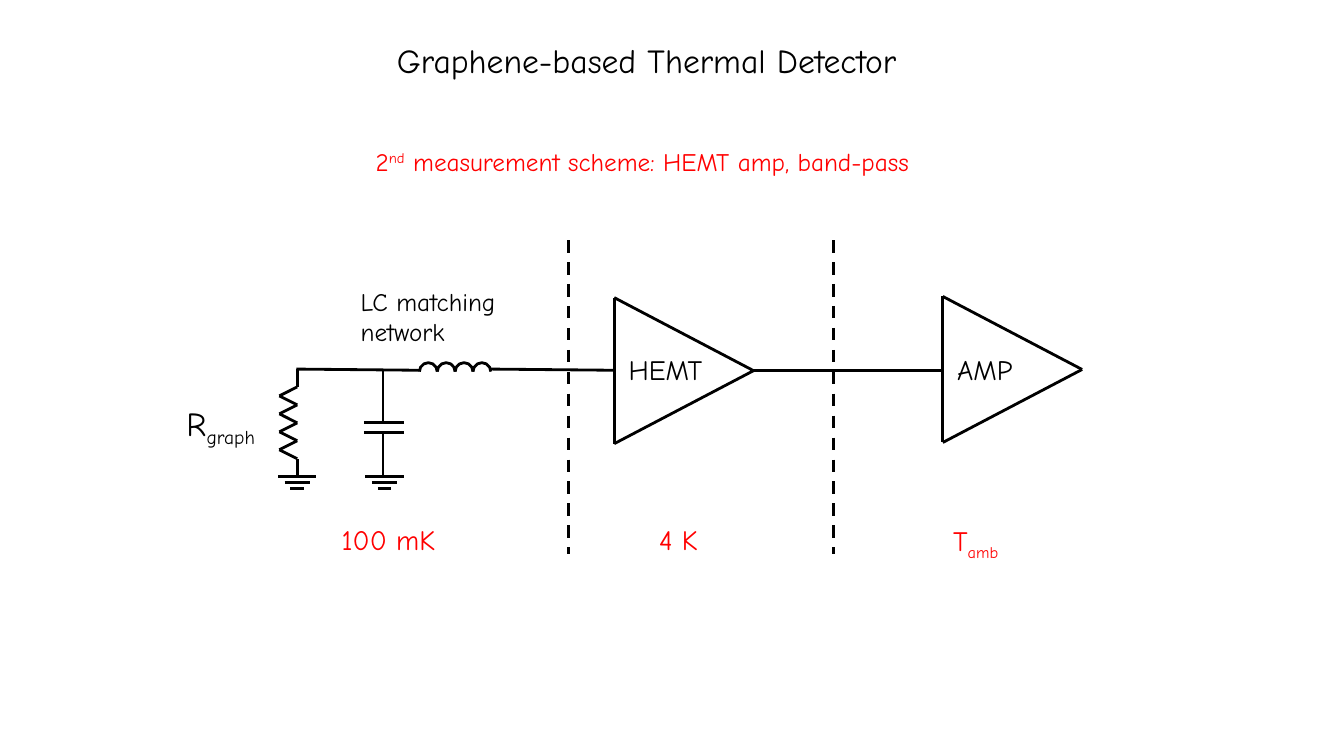
from lxml import etree
from pptx import Presentation
from pptx.dml.color import RGBColor
from pptx.enum.dml import MSO_LINE
from pptx.enum.shapes import MSO_CONNECTOR, MSO_SHAPE
from pptx.enum.text import MSO_AUTO_SIZE
from pptx.oxml.ns import qn
from pptx.util import Cm, Pt

BLACK = RGBColor(0x00, 0x00, 0x00)
RED = RGBColor(0xFF, 0x00, 0x00)
FONT = "Comic Neue"
STRAIGHT = MSO_CONNECTOR.STRAIGHT
ARC = MSO_SHAPE.ARC
DASH = MSO_LINE.DASH
GROW = MSO_AUTO_SIZE.SHAPE_TO_FIT_TEXT
NO_FIT = MSO_AUTO_SIZE.NONE

RESISTOR_X = 7.49
GROUND_Y = 12.01


def add_line(page, x1, y1, x2, y2, width=2, dash=None):
    line = page.shapes.add_connector(STRAIGHT, Cm(x1), Cm(y1), Cm(x2), Cm(y2))
    line.line.color.rgb = BLACK
    line.line.width = Pt(width)
    if dash is not None:
        line.line.dash_style = dash
    etree.SubElement(line._element.spPr, qn("a:effectLst"))


def add_text(page, left, top, width, height, spans, size, color=BLACK,
             wrap=False, fit=GROW):
    """Spans are pairs of wording and baseline shift in percent."""
    box = page.shapes.add_textbox(Cm(left), Cm(top), Cm(width), Cm(height))
    frame = box.text_frame
    frame.word_wrap = wrap
    frame.auto_size = fit
    para = frame.paragraphs[0]
    para.font.name = FONT
    para.font.size = Pt(size)
    para.font.color.rgb = color
    for wording, shift in spans:
        span = para.add_run()
        span.text = wording
        if shift:
            span._r.get_or_add_rPr().set("baseline", str(shift * 1000))


def add_resistor(page, top, bottom, teeth=4, depth=0.45):
    step = (bottom - top) / (2 * teeth)
    for i in range(2 * teeth):
        start, end = RESISTOR_X, RESISTOR_X - depth
        if i % 2:
            start, end = end, start
        add_line(page, start, top + i * step, end, top + (i + 1) * step)


def add_capacitor(page, x, top):
    plates = (10.64, 10.9)
    for y in plates:
        add_line(page, x - 0.48, y, x + 0.54, y)
    add_line(page, x, top, x, plates[0])
    add_line(page, x, plates[1], x, GROUND_Y)


def add_inductor(page, left, top, turns=4, diameter=0.45):
    for i in range(turns):
        turn = page.shapes.add_shape(ARC, Cm(left + i * diameter), Cm(top),
                                     Cm(diameter), Cm(diameter))
        # Upper half circle, from 180 degrees round to 0
        turn.adjustments[0] = 108
        turn.adjustments[1] = 0
        turn.shadow.inherit = False
        turn.fill.background()
        turn.line.color.rgb = BLACK
        turn.line.width = Pt(2)


def add_ground(page, x):
    for i, half in enumerate((0.48, 0.32, 0.17)):
        y = GROUND_Y + i * 0.15
        add_line(page, x - half, y, x + half, y)


def add_amplifier(page, left, top, label, width=3.51, height=3.68):
    tip = (left + width, top + height / 2)
    add_line(page, left, top, left, top + height)
    add_line(page, left, top, *tip)
    add_line(page, *tip, left, top + height)
    add_text(page, left + 0.11, 8.76, 3.43, 1.3, [(label, 0)], 20,
             wrap=True, fit=NO_FIT)


def main():
    deck = Presentation()
    deck.slide_width, deck.slide_height = Cm(33.87), Cm(19.05)
    page = deck.slides.add_slide(deck.slide_layouts[6])

    # Headings
    add_text(page, 9.75, 0.89, 14.27, 1.27,
             [("Graphene-based Thermal Detector", 0)], 24)
    add_text(page, 9.22, 3.56, 14.94, 1.02,
             [("2", 0), ("nd", 30),
              (" measurement scheme: HEMT amp, band-pass", 0)], 18, RED)

    # Graphene resistor and LC matching network
    add_resistor(page, 9.75, 11.56)
    add_capacitor(page, 9.65, 9.32)
    add_inductor(page, 10.57, 9.14)
    for x in (RESISTOR_X, 9.69):
        add_ground(page, x)
    add_text(page, 4.45, 10.03, 2.57, 1.3, [("R", 0), ("graph", -25)], 24,
             wrap=True, fit=NO_FIT)
    add_text(page, 8.84, 7.09, 4.22, 1.8, [("LC matching network", 0)], 18,
             wrap=True)

    # Amplifiers
    add_amplifier(page, 15.48, 7.5, "HEMT")
    add_amplifier(page, 23.76, 7.47, "AMP")

    # Wires
    for wire in ((RESISTOR_X, 9.3, RESISTOR_X, 9.75),
                 (RESISTOR_X, 11.56, RESISTOR_X, GROUND_Y),
                 (7.47, 9.3, 10.57, 9.33),
                 (12.37, 9.3, 15.48, 9.33),
                 (18.9, 9.34, 23.76, 9.34)):
        add_line(page, *wire)

    # Temperature stages
    for x in (14.33, 21.01):
        add_line(page, x, 6.05, x, 13.95, 2.25, DASH)
    for left, top, width, spans in (
            (8.36, 13.03, 2.92, [("100 mK", 0)]),
            (16.36, 13.03, 1.6, [("4 K", 0)]),
            (23.77, 13.06, 1.91, [("T", 0), ("amb", -25)])):
        add_text(page, left, top, width, 1.12, spans, 20, RED)

    deck.save("out.pptx")


if __name__ == "__main__":
    main()
